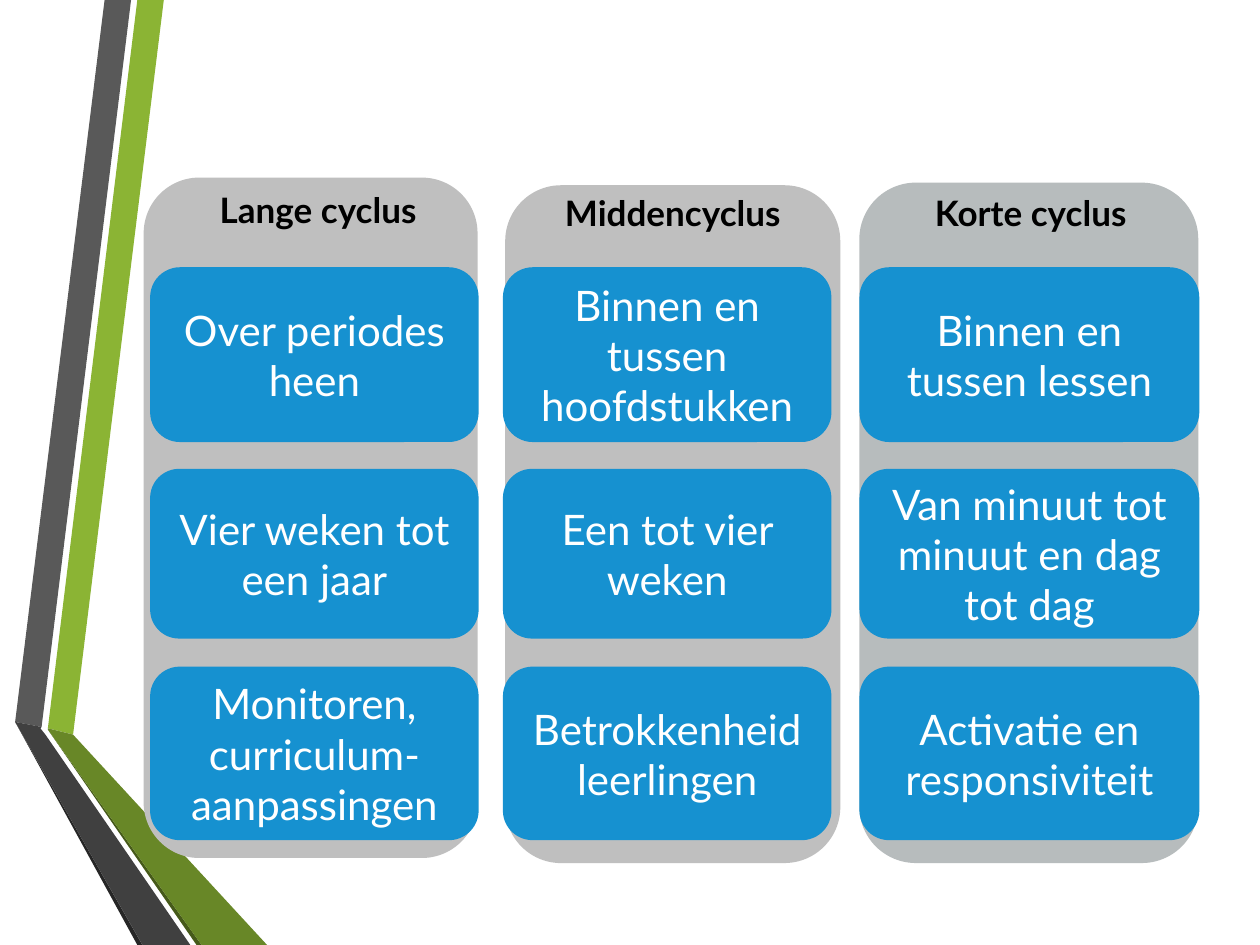
from pptx import Presentation
from pptx.dml.color import RGBColor
from pptx.enum.shapes import MSO_SHAPE
from pptx.enum.text import MSO_ANCHOR, PP_ALIGN
from pptx.util import Inches, Pt

THEME = {
    "font": "Lato",
    "heading_size": 20,
    "card_size": 24,
    "heading": "000000",
    "card": "1691D0",
    "card_text": "FFFFFF",
    "panel": "BFBFBF",
    "cool_panel": "B7BCBD",
    "green": "8BB434",
    "green_fold": "688727",
    "green_edge": "465A1A",
    "grey": "595959",
    "grey_fold": "404040",
    "grey_edge": "262626",
}

RIBBONS = [
    ("green", [(0.38, 5.78), (0.58, 5.83), (1.3, 0), (1.09, 0)]),
    ("grey", [(1.04, 0), (0.83, 0), (0.12, 5.73), (0.33, 5.77)]),
    ("grey_edge", [(0.12, 5.73), (1.09, 7.5), (1.13, 7.5)]),
    ("green_edge", [(0.38, 5.79), (1.56, 7.5), (1.6, 7.5)]),
    ("green_fold", [(0.38, 5.79), (1.6, 7.5), (2.12, 7.5), (0.58, 5.83), (0.38, 5.78)]),
    ("grey_fold", [(1.51, 7.5), (0.36, 5.83), (0.32, 5.78), (0.33, 5.77), (0.12, 5.73), (1.13, 7.5)]),
]

COLUMNS = [
    {
        "heading": "Lange cyclus",
        "panel": (1.14, 1.41, 2.65, 5.4),
        "panel_color": "panel",
        "heading_box": (1.2, 1.45, 2.65, 0.44),
        "cards_across": (1.2, 2.59),
        "cards": ["Over periodes heen", "Vier weken tot een jaar", "Monitoren, curriculum-aanpassingen"],
    },
    {
        "heading": "Middencyclus",
        "panel": (4.01, 1.47, 2.66, 5.38),
        "panel_color": "panel",
        "heading_box": (4.01, 1.47, 2.66, 0.44),
        "cards_across": (4, 2.59),
        "cards": ["Binnen en tussen hoofdstukken", "Een tot vier weken", "Betrokkenheid leerlingen"],
    },
    {
        "heading": "Korte cyclus",
        "panel": (6.82, 1.45, 2.69, 5.4),
        "panel_color": "cool_panel",
        "heading_box": (6.84, 1.47, 2.68, 0.44),
        "cards_across": (6.83, 2.68),
        "cards": ["Binnen en tussen lessen", "Van minuut tot minuut en dag tot dag", "Activatie en responsiviteit"],
    },
]
ROWS = [(2.13, 1.37), (3.73, 1.33), (5.3, 1.36)]


def color(name):
    return RGBColor.from_string(THEME[name])


def paint(shape, fill, line=None):
    shape.shadow.inherit = False
    shape.fill.solid()
    shape.fill.fore_color.rgb = color(fill)
    if line:
        shape.line.color.rgb = color(line)
        shape.line.width = Pt(1.25)
    else:
        shape.line.fill.background()


def write(shape, text, *, size, ink, bold=False, anchor=MSO_ANCHOR.TOP):
    frame = shape.text_frame
    frame.word_wrap = True
    frame.vertical_anchor = anchor
    para = frame.paragraphs[0]
    para.alignment = PP_ALIGN.CENTER
    span = para.add_run()
    span.text = text
    span.font.name = THEME["font"]
    span.font.size = Pt(THEME[size])
    span.font.bold = bold
    span.font.color.rgb = color(ink)


def add_ribbon(page, fill, points):
    corners = [(Inches(x), Inches(y)) for x, y in points]
    builder = page.shapes.build_freeform(*corners[0])
    builder.add_line_segments(corners[1:], close=True)
    paint(builder.convert_to_shape(), fill)


def add_rounded(page, place, fill, line=None):
    box = page.shapes.add_shape(MSO_SHAPE.ROUNDED_RECTANGLE, *map(Inches, place))
    paint(box, fill, line)
    return box


def add_column(page, column):
    add_rounded(page, column["panel"], column["panel_color"])
    heading = page.shapes.add_textbox(*map(Inches, column["heading_box"]))
    write(heading, column["heading"], size="heading_size", ink="heading", bold=True)
    left, width = column["cards_across"]
    for text, (top, height) in zip(column["cards"], ROWS):
        card = add_rounded(page, (left, top, width, height), "card", "card")
        write(card, text, size="card_size", ink="card_text", anchor=MSO_ANCHOR.MIDDLE)


def main():
    deck = Presentation()
    deck.slide_width, deck.slide_height = Inches(10), Inches(7.5)
    page = deck.slides.add_slide(deck.slide_layouts[6])
    for fill, points in RIBBONS:
        add_ribbon(page, fill, points)
    for column in COLUMNS:
        add_column(page, column)
    deck.save("out.pptx")


if __name__ == "__main__":
    main()
